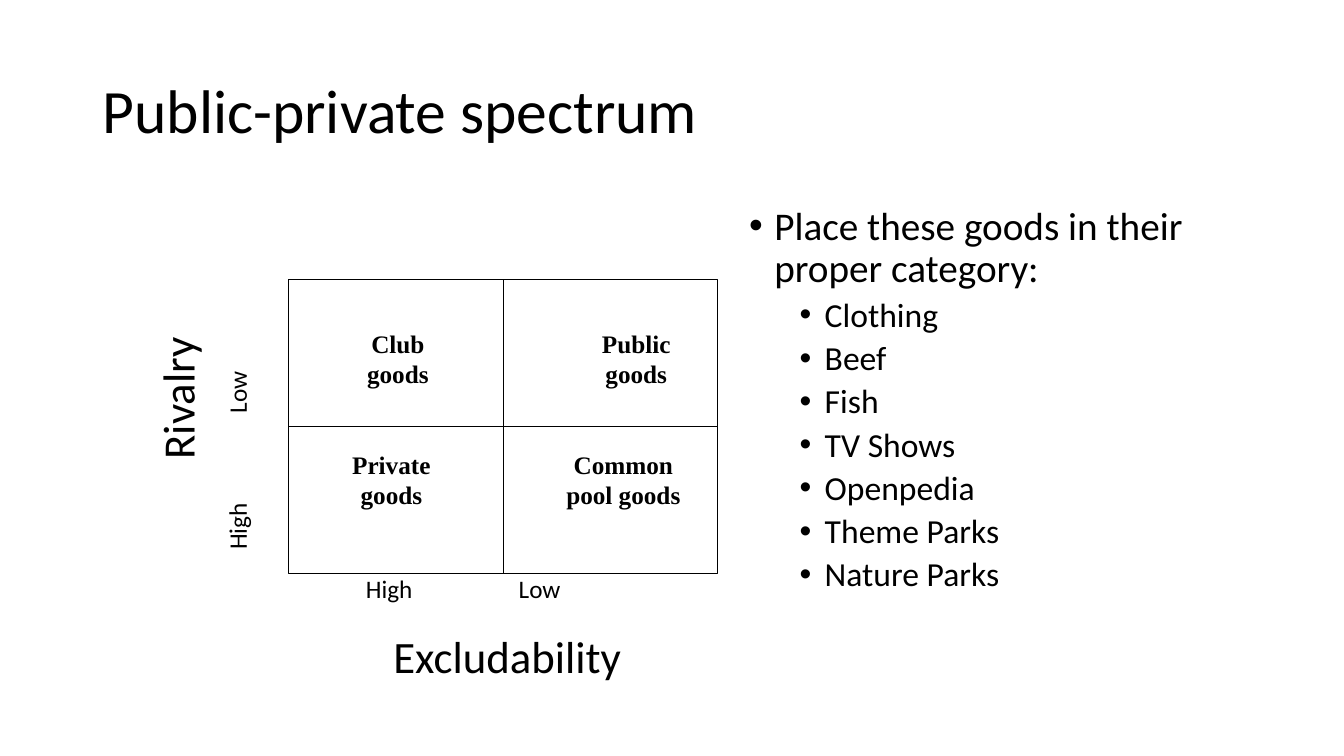
from pptx import Presentation, util as u
from pptx.dml.color import RGBColor
from pptx.enum import shapes, text
from pptx.oxml import parse_xml
from pptx.oxml.ns import nsdecls

WIDE, HIGH = 13.33, 7.5
INK = "000000"
LEFT, TOP, CELL_W, CELL_H = 2.86, 2.77, 2.13, 1.46
SANS = {"name": "Calibri", "size": u.Pt(18)}
BIG = {**SANS, "size": u.Pt(32)}
SERIF = {"name": "Times New Roman", "size": u.Pt(18), "bold": True}
MID = {"alignment": text.PP_ALIGN.CENTER}
NO_PAD = dict.fromkeys(
    ("margin_left", "margin_right", "margin_top", "margin_bottom"), 0)

GOODS = ["Clothing", "Beef", "Fish", "TV Shows", "Openpedia",
         "Theme Parks", "Nature Parks"]
# Words, centre across and down, in columns and rows of the matrix
NAMES = [
    (["Club", "goods"], 0.51, 0.54),
    (["Public", "goods"], 1.62, 0.54),
    (["Private", "goods"], 0.48, 1.36),
    (["Common", "pool goods"], 1.56, 1.36),
]
# Words, centre, format and turn of the axis labels
AXES = [
    ("High", 0.47, 2.1, SANS, 0),
    ("Low", 1.17, 2.1, SANS, 0),
    ("Excludability", 1.02, 2.56, BIG, 0),
    ("High", -0.24, 1.68, SANS, 270),
    ("Low", -0.24, 0.77, SANS, 270),
    ("Rivalry", -0.52, 0.81, BIG, 270),
]


def color(code):
    return RGBColor.from_string(code)


def apply(item, form):
    for key, value in form.items():
        setattr(item, key, value)


def add_text(slide, box, lines, font, para=None, frame=None):
    """Add a text box with one paragraph for each line."""
    shape = slide.shapes.add_textbox(*map(u.Inches, box))
    body = shape.text_frame
    apply(body, {"word_wrap": True, **(frame or {})})
    for num, line in enumerate(lines):
        part = body.add_paragraph() if num else body.paragraphs[0]
        apply(part, para or {})
        run = part.add_run()
        run.text = line
        apply(run.font, font)
        run.font.color.rgb = color(INK)
    return shape


def add_label(slide, lines, col, row, font, turn=0):
    """Centre text on a point of the matrix."""
    wide, tall = 2.4, 0.7
    box = (LEFT + col * CELL_W - wide / 2, TOP + row * CELL_H - tall / 2,
           wide, tall)
    shape = add_text(slide, box, lines, font, MID, {
        **NO_PAD, "vertical_anchor": text.MSO_ANCHOR.MIDDLE})
    shape.rotation = turn


def add_cell(slide, col, row):
    box = LEFT + col * CELL_W, TOP + row * CELL_H, CELL_W, CELL_H
    cell = slide.shapes.add_shape(
        shapes.MSO_SHAPE.RECTANGLE, *map(u.Inches, box))
    cell.shadow.inherit = False
    cell.fill.background()
    cell.line.color.rgb = color(INK)
    cell.line.width = u.Pt(0.75)


def add_bullet(part, indent):
    props = part._p.get_or_add_pPr()
    props.set("marL", str(u.Inches(indent)))
    props.set("indent", str(u.Inches(-0.25)))
    for tag in ('buFont {} typeface="Arial"', 'buChar {} char="•"'):
        props.append(parse_xml(f"<a:{tag.format(nsdecls('a'))}/>"))


def add_list(slide, box, lead, items):
    """Add a lead line with bulleted items one level below."""
    shape = add_text(slide, box, [lead, *items],
                     {**SANS, "size": u.Pt(24)}, {"line_spacing": 0.9})
    for num, part in enumerate(shape.text_frame.paragraphs):
        part.space_before = u.Pt(5 if num else 10)
        part.level = 1 if num else 0
        add_bullet(part, 0.75 if num else 0.25)
    shape.text_frame.paragraphs[0].runs[0].font.size = u.Pt(28)


def main():
    deck = Presentation()
    deck.slide_width, deck.slide_height = u.Inches(WIDE), u.Inches(HIGH)
    slide = deck.slides.add_slide(deck.slide_layouts[6])

    # Title and task
    add_text(slide, (0.92, 0.4, 11.5, 1.45), ["Public-private spectrum"],
             {**SANS, "size": u.Pt(44)}, {"line_spacing": 0.9},
             {"vertical_anchor": text.MSO_ANCHOR.MIDDLE})
    add_list(slide, (WIDE * 0.55, 2, 5.09, 4.76),
             "Place these goods in their proper category:", GOODS)

    # Two by two matrix
    for row in range(2):
        for col in range(2):
            add_cell(slide, col, row)
    for lines, col, row in NAMES:
        add_label(slide, lines, col, row, SERIF)

    # Axes
    for word, col, row, font, turn in AXES:
        add_label(slide, [word], col, row, font, turn)

    deck.save("out.pptx")


if __name__ == "__main__":
    main()
